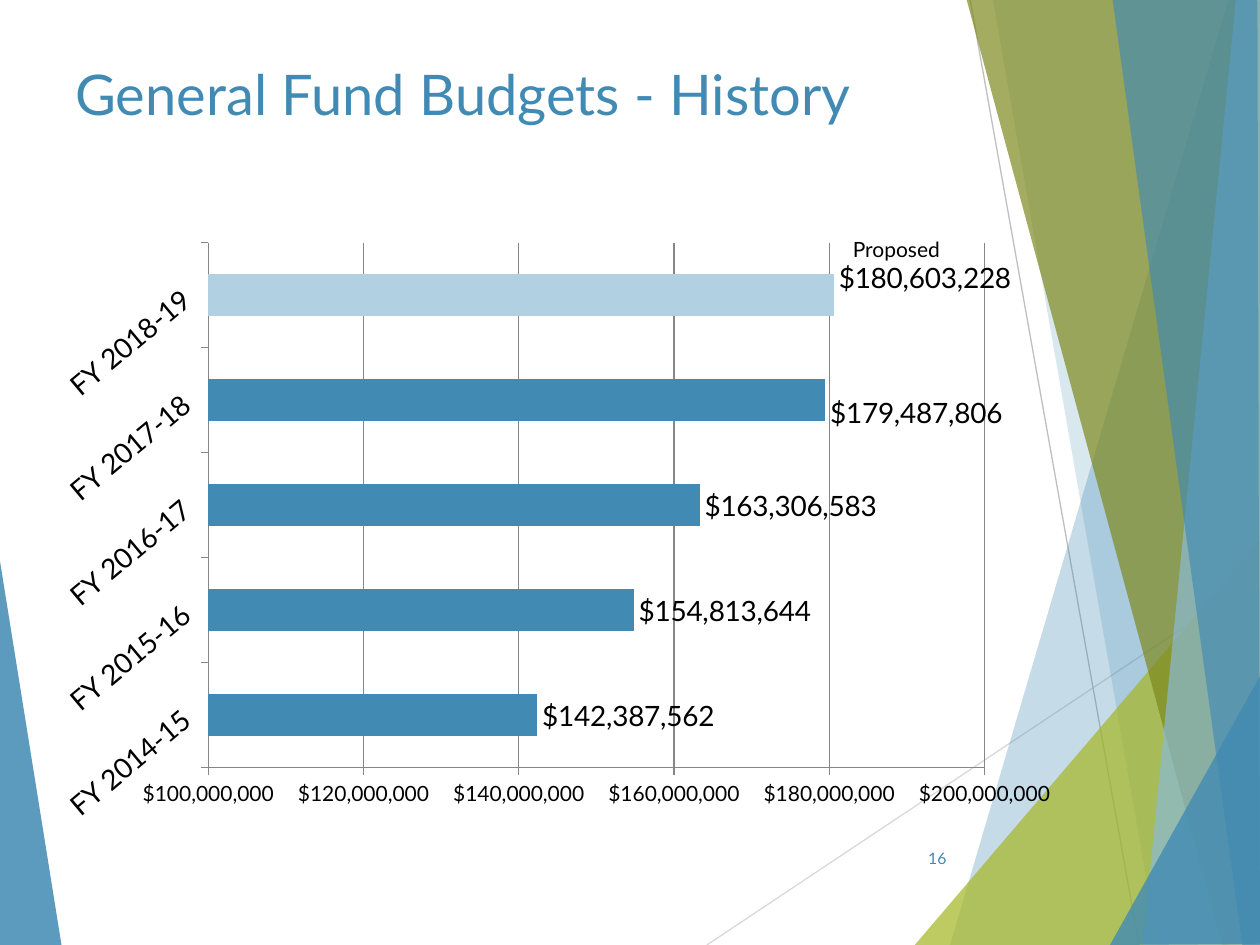
from lxml.etree import SubElement
from pptx import Presentation
from pptx.chart.data import CategoryChartData
from pptx.dml.color import RGBColor
from pptx.enum.chart import XL_CHART_TYPE as Kind, XL_LABEL_POSITION as Pos
from pptx.enum.chart import XL_TICK_MARK as Tick
from pptx.enum.shapes import MSO_CONNECTOR as Link
from pptx.enum.text import MSO_ANCHOR as Anchor, PP_ALIGN as Align
from pptx.oxml import parse_xml
from pptx.oxml.ns import nsdecls, qn
from pptx.util import Inches, Pt

FONT = "Lato"
BLUE = "418AB3"
MONEY = '"$"#,##0'
GRAY = "868686"
BUDGETS = {
    "FY 2014-15": 142387562,
    "FY 2015-16": 154813644,
    "FY 2016-17": 163306583,
    "FY 2017-18": 179487806,
    "FY 2018-19": 180603228,
}
RAYS = [  # start x, start y, end x, end y, colour
    (5.61, 7.5, 10.01, 4.57, "D9D9D9"),
    (7.7, 0, 9.04, 7.5, "BFBFBF"),
]
WEDGE = ([(-0.01, 4.39), (0.49, 7.51), (-0.01, 7.5)], BLUE, 85)
SHARDS = [  # corners, colour, opacity in percent
    ([(9.75, 0), (7.54, 7.5), (10.02, 7.51), (10.01, 0.01)], BLUE, 30),
    ([(7.88, -0.01), (9.19, 7.5), (10.01, 7.5), (10.01, -0.01)], BLUE, 20),
    ([(7.26, 7.5), (10, 4.29), (10.01, 7.5)], "A6B727", 72),
    ([(7.67, -0.01), (9.7, 7.5), (10.01, 7.49), (10.01, -0.01)], "7D891D", 70),
    ([(9.81, -0.01), (9.07, 7.5), (10.01, 7.5), (10, -0.01)], "8ABAD4", 70),
    ([(8.83, -0.01), (9.86, 7.5), (10, 7.5), (9.98, -0.01)], BLUE, 65),
    ([(8.81, 7.5), (10.01, 5.35), (10.01, 7.49)], BLUE, 80),
]


def rgb(code):
    return RGBColor.from_string(code)


def paint(fill, code):
    fill.solid()
    fill.fore_color.rgb = rgb(code)


def style(font, size, code="000000"):
    font.name, font.size, font.bold = FONT, Pt(size), False
    font.color.rgb = rgb(code)


def add_shard(slide, points, code, opacity):
    """Draw a translucent polygon."""
    first, *rest = [(Inches(x), Inches(y)) for x, y in points]
    pen = slide.shapes.build_freeform(*first, scale=1.0)
    pen.add_line_segments(rest, close=True)
    shape = pen.convert_to_shape()
    shape.shadow.inherit = False
    paint(shape.fill, code)
    shape.line.fill.background()
    tint = shape._element.spPr.find(qn("a:solidFill"))[0]
    SubElement(tint, qn("a:alpha")).set("val", str(opacity * 1000))


def add_ray(slide, x1, y1, x2, y2, code):
    ends = [Inches(v) for v in (x1, y1, x2, y2)]
    ray = slide.shapes.add_connector(Link.STRAIGHT, *ends)
    ray.line.color.rgb = rgb(code)
    ray.line.width = Pt(0.75)
    SubElement(ray._element.spPr, qn("a:effectLst"))


def add_text(slide, text, box, size, code="000000",
             align=Align.LEFT, anchor=Anchor.TOP):
    frame = slide.shapes.add_textbox(*[Inches(v) for v in box]).text_frame
    frame.word_wrap = True
    frame.vertical_anchor = anchor
    para = frame.paragraphs[0]
    para.alignment = align
    run = para.add_run()
    run.text = text
    style(run.font, size, code)


def layout(x, y, w=None, h=None):
    """Return a manual layout: a plot area if sized, else a label offset."""
    tags = []
    if w:
        tags = [("layoutTarget", "inner"), ("xMode", "edge"), ("yMode", "edge")]
    tags += [("x", x), ("y", y)]
    if w:
        tags += [("w", w), ("h", h)]
    body = "".join(f'<c:{tag} val="{val}"/>' for tag, val in tags)
    return parse_xml(f'<c:layout {nsdecls("c")}><c:manualLayout>{body}'
                     '</c:manualLayout></c:layout>')


def set_axis(axis, size):
    axis.major_tick_mark = Tick.OUTSIDE
    axis.minor_tick_mark = Tick.NONE
    axis.format.line.color.rgb = rgb(GRAY)
    style(axis.tick_labels.font, size)


def shift_label(point, y):
    """Move a value label up or down by a share of the chart height."""
    label = point.data_label
    style(label.font, 16)
    label.position = Pos.OUTSIDE_END
    label._dLbl.insert(1, layout(0, y))


def add_bars(slide):
    data = CategoryChartData(number_format=MONEY)
    data.categories = list(BUDGETS)
    data.add_series("Series 1", list(BUDGETS.values()))
    box = [Inches(v) for v in (0.33, 1.83, 8.17, 4.77)]
    chart = slide.shapes.add_chart(Kind.BAR_CLUSTERED, *box, data).chart
    chart.has_legend = chart.has_title = False
    style(chart.font, 18)

    years, sums = chart.category_axis, chart.value_axis
    set_axis(years, 16)
    years._element.find(qn("c:txPr"))[0].set("rot", str(-40 * 60000))
    set_axis(sums, 12)
    sums.minimum_scale, sums.maximum_scale = 100_000_000, 200_000_000
    sums.major_unit = 20_000_000
    sums.has_major_gridlines = True
    sums.major_gridlines.format.line.color.rgb = rgb(GRAY)
    sums.tick_labels.number_format = MONEY
    sums.tick_labels.number_format_is_linked = False

    plot = chart.plots[0]
    plot.vary_by_categories = False
    plot.gap_width = 150
    bars = plot.series[0]
    paint(bars.format.fill, BLUE)
    paint(bars.points[4].format.fill, "B1D1E3")
    labels = bars.data_labels
    labels.show_value = True
    labels.position = Pos.OUTSIDE_END
    labels.number_format = MONEY
    labels.number_format_is_linked = False
    style(labels.font, 16)
    shift_label(bars.points[3], 0.02)
    shift_label(bars.points[4], -0.03)

    area = chart._chartSpace.chart.plotArea
    for old in area.findall(qn("c:layout")):
        area.remove(old)
    area.insert(0, layout(0.162, 0.02, 0.754, 0.874))


def main():
    deck = Presentation()
    deck.slide_width, deck.slide_height = Inches(10), Inches(7.5)
    slide = deck.slides.add_slide(deck.slide_layouts[6])
    add_shard(slide, *WEDGE)
    for ray in RAYS:
        add_ray(slide, *ray)
    for shard in SHARDS:
        add_shard(slide, *shard)
    add_text(slide, "General Fund Budgets - History", (0.5, 0.42, 9, 0.83),
             32, BLUE)
    add_bars(slide)
    add_text(slide, "16", (7.05, 6.61, 0.56, 0.4), 9, BLUE,
             Align.RIGHT, Anchor.MIDDLE)
    add_text(slide, "Proposed", (6.67, 1.83, 0.94, 0.3), 12)
    deck.save("out.pptx")


if __name__ == "__main__":
    main()
